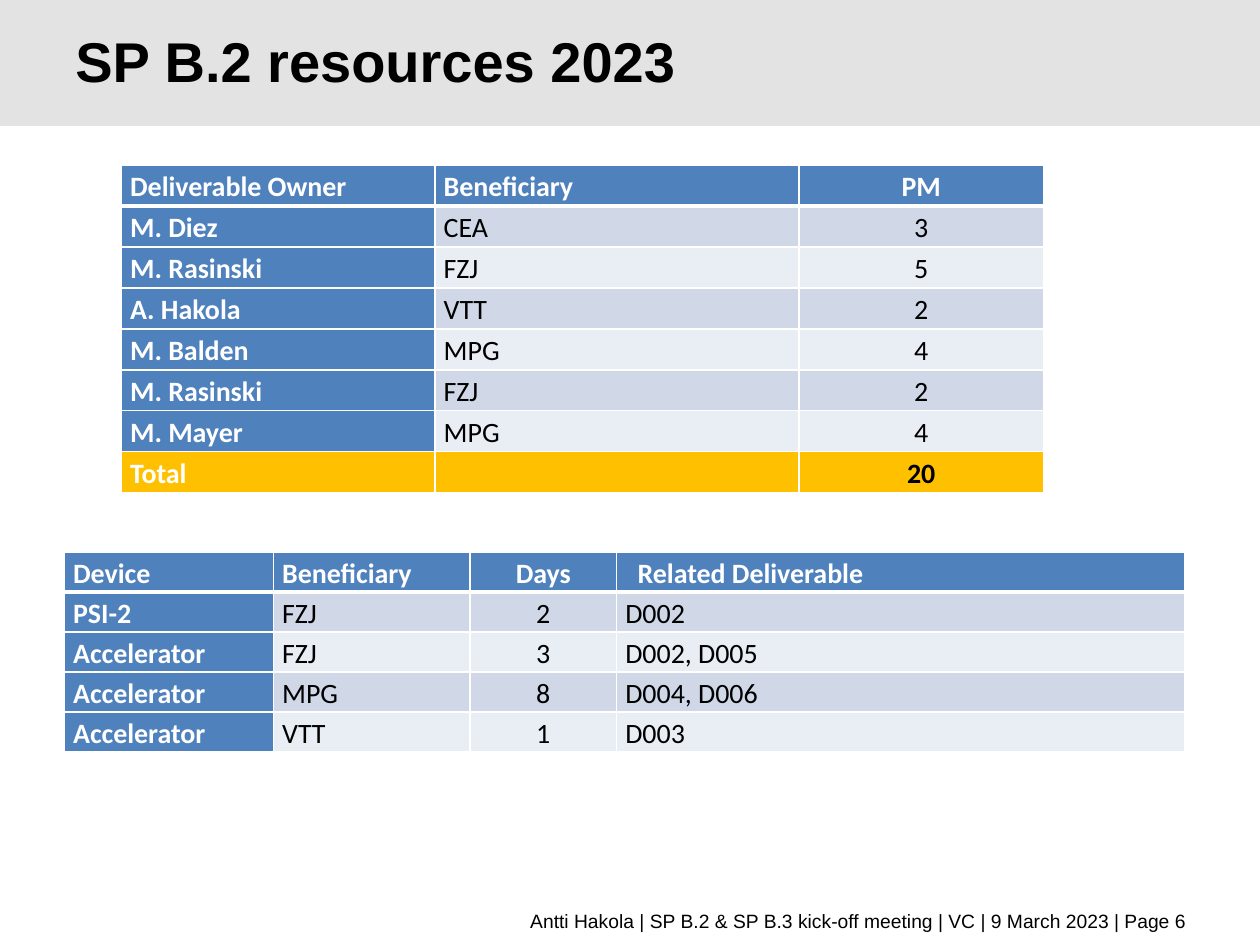
from lxml.etree import SubElement
from pptx import Presentation
from pptx.dml.color import RGBColor
from pptx.enum.shapes import MSO_SHAPE
from pptx.enum.text import MSO_ANCHOR, PP_ALIGN
from pptx.oxml.ns import qn
from pptx.util import Pt

BLACK = RGBColor(0x00, 0x00, 0x00)
WHITE = RGBColor(0xFF, 0xFF, 0xFF)
BANNER_GRAY = RGBColor(0xE3, 0xE3, 0xE3)
BLUE = RGBColor(0x4F, 0x81, 0xBD)
BAND_DARK = RGBColor(0xD0, 0xD8, 0xE8)
BAND_LIGHT = RGBColor(0xE9, 0xED, 0xF4)
AMBER = RGBColor(0xFF, 0xC0, 0x00)

SLIDE_WIDTH, SLIDE_HEIGHT = 720, 540


def write_text(text_frame, text, *, font="Arial", size=16, color=BLACK, bold=False,
               align=PP_ALIGN.LEFT, line_spacing=None):
    paragraph = text_frame.paragraphs[0]
    paragraph.alignment = align
    paragraph.line_spacing = line_spacing
    run = paragraph.add_run()
    run.text = text
    run.font.name = font
    run.font.size = Pt(size)
    run.font.bold = bold
    run.font.color.rgb = color


def set_borders(cell, **widths):
    """Draw white cell borders; widths in points are keyed L, R, T and B."""
    properties = cell._tc.get_or_add_tcPr()
    for side in "LRTB":
        line = SubElement(properties, qn(f"a:ln{side}"), w=str(Pt(widths.get(side, 1))))
        fill = SubElement(line, qn("a:solidFill"))
        SubElement(fill, qn("a:srgbClr"), val=str(WHITE))


class SlideBuilder:
    table_font = "Calibri"
    cell_margin = 5
    header_rule = 3

    def __init__(self, slide):
        self.slide = slide

    def banner(self, left, top, width, height):
        shape = self.slide.shapes.add_shape(
            MSO_SHAPE.RECTANGLE, Pt(left), Pt(top), Pt(width), Pt(height))
        shape.shadow.inherit = False
        shape.fill.solid()
        shape.fill.fore_color.rgb = BANNER_GRAY
        shape.line.fill.background()

    def text_box(self, left, top, width, height, text, **text_format):
        shape = self.slide.shapes.add_textbox(Pt(left), Pt(top), Pt(width), Pt(height))
        shape.text_frame.word_wrap = True
        shape.text_frame.vertical_anchor = MSO_ANCHOR.MIDDLE
        write_text(shape.text_frame, text, **text_format)

    def table(self, left, top, column_widths, row_height, rows, centered, has_total=False):
        shape = self.slide.shapes.add_table(
            len(rows), len(column_widths), Pt(left), Pt(top),
            Pt(sum(column_widths)), Pt(row_height * len(rows)))
        table = shape.table
        table.first_col = True
        for column, width in zip(table.columns, column_widths):
            column.width = Pt(width)
        for row_index, values in enumerate(rows):
            table.rows[row_index].height = Pt(row_height)
            is_total = has_total and row_index == len(rows) - 1
            for column_index, value in enumerate(values):
                self.table_cell(table.cell(row_index, column_index), value, row_index,
                                column_index, column_index == centered, is_total)
        return table

    def table_cell(self, cell, value, row_index, column_index, is_centered, is_total):
        is_heading = row_index == 0 or column_index == 0
        if is_total:
            fill = AMBER
        elif is_heading:
            fill = BLUE
        else:
            fill = BAND_DARK if row_index % 2 else BAND_LIGHT

        rule_side = {0: "B", 1: "T"}.get(row_index)
        set_borders(cell, **({rule_side: self.header_rule} if rule_side else {}))
        cell.fill.solid()
        cell.fill.fore_color.rgb = fill
        cell.margin_left = cell.margin_right = Pt(self.cell_margin)
        cell.margin_top = cell.margin_bottom = 0
        if value:
            write_text(cell.text_frame, value, font=self.table_font,
                       color=WHITE if is_heading else BLACK,
                       bold=is_heading or is_total, line_spacing=1.15,
                       align=PP_ALIGN.CENTER if is_centered else PP_ALIGN.LEFT)


def main():
    presentation = Presentation()
    presentation.slide_width = Pt(SLIDE_WIDTH)
    presentation.slide_height = Pt(SLIDE_HEIGHT)
    builder = SlideBuilder(presentation.slides.add_slide(presentation.slide_layouts[6]))

    # Banner and footer
    builder.banner(0, 0, SLIDE_WIDTH, 72)
    builder.text_box(36.7, 515.5, 648.7, 20.9,
                     "Antti Hakola | SP B.2 & SP B.3 kick-off meeting | VC | 9 March 2023 | Page 6",
                     size=11, align=PP_ALIGN.RIGHT)

    # Title
    builder.text_box(36, 3.6, 594, 68.4, "SP B.2 resources 2023",
                     size=32, bold=True, line_spacing=Pt(32))

    # Person months per deliverable owner
    builder.table(69.4, 94.4, [179.2, 208, 139.7], 23.4, [
        ("Deliverable Owner", "Beneficiary", "PM"),
        ("M. Diez", "CEA", "3"),
        ("M. Rasinski", "FZJ", "5"),
        ("A. Hakola", "VTT", "2"),
        ("M. Balden", "MPG", "4"),
        ("M. Rasinski", "FZJ", "2"),
        ("M. Mayer", "MPG", "4"),
        ("Total", "", "20"),
    ], centered=2, has_total=True)

    # Device days
    devices = builder.table(36.8, 315.4, [119.5, 112.3, 83.8, 324.9], 22.9, [
        ("Device", "Beneficiary", "Days", "Related Deliverable"),
        ("PSI-2", "FZJ", "2", "D002"),
        ("Accelerator", "FZJ", "3", "D002, D005"),
        ("Accelerator", "MPG", "8", "D004, D006"),
        ("Accelerator", "VTT", "1", "D003"),
    ], centered=2)
    devices.cell(0, 3).margin_left = Pt(12)

    presentation.save("out.pptx")


if __name__ == "__main__":
    main()
